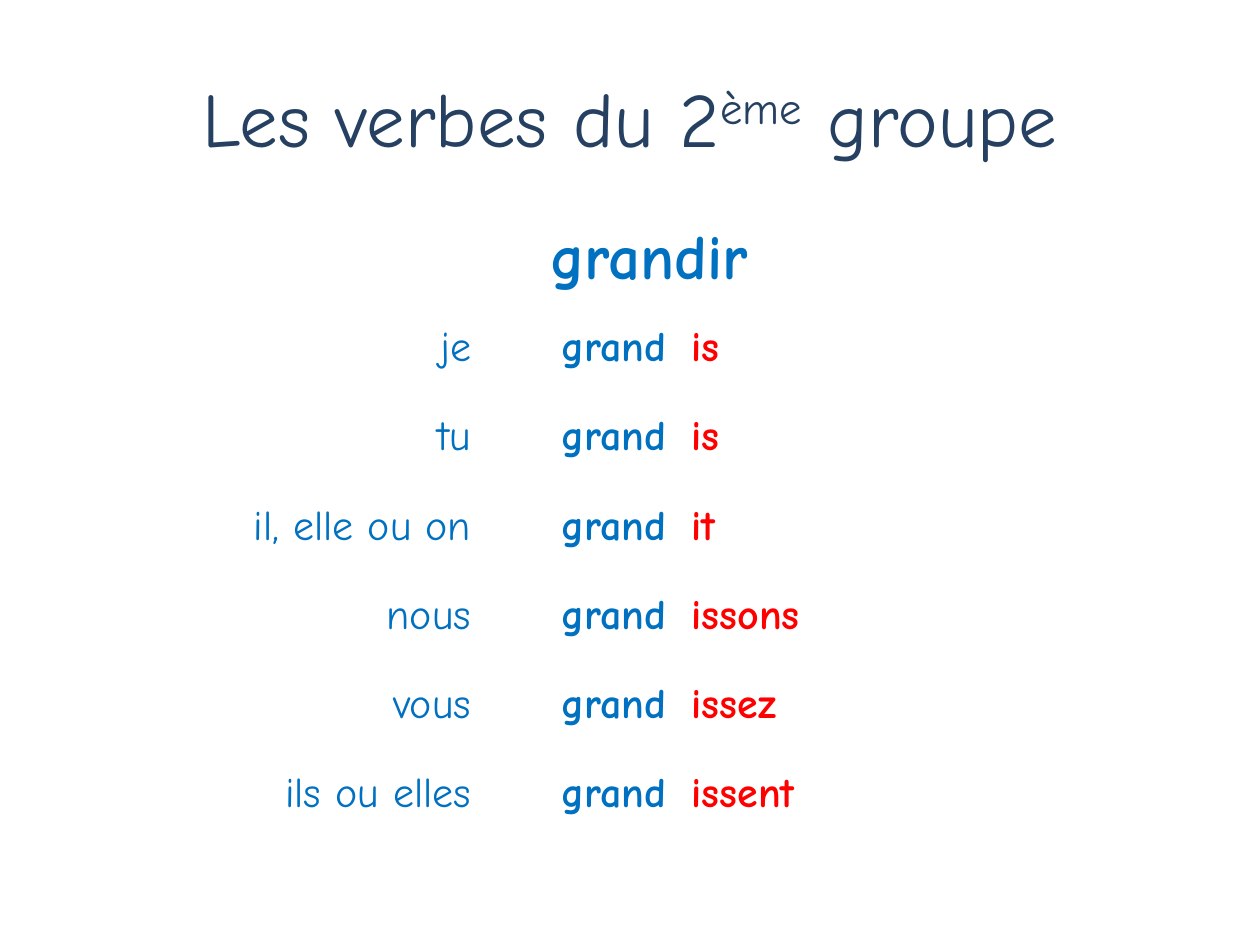
from pptx import Presentation
from pptx.dml.color import RGBColor
from pptx.enum.text import MSO_ANCHOR, PP_ALIGN
from pptx.util import Pt

CENTER, LEFT, RIGHT = PP_ALIGN.CENTER, PP_ALIGN.LEFT, PP_ALIGN.RIGHT
MIDDLE = MSO_ANCHOR.MIDDLE

FONT = "Comic Neue"
NAVY, BLUE, RED, WHITE = "254061", "0070C0", "FF0000", "FFFFFF"

TITLE = [("Les verbes du 2", False), ("ème", True), (" groupe", False)]
VERB, STEM = "grandir", "grand"
ENDINGS = [
    ("je", "is"),
    ("tu", "is"),
    ("il, elle ou on", "it"),
    ("nous", "issons"),
    ("vous", "issez"),
    ("ils ou elles", "issent"),
]
COLUMN_WIDTHS = [188.6, 111.6, 266.4]


def color(hex_string):
    return RGBColor.from_string(hex_string)


def style(span, size, hex_string, bold=False):
    span.font.name = FONT
    span.font.size = Pt(size)
    span.font.bold = bold
    span.font.color.rgb = color(hex_string)


def add_title(page, left, top, width, height):
    box = page.shapes.add_textbox(Pt(left), Pt(top), Pt(width), Pt(height))
    frame = box.text_frame
    frame.word_wrap = True
    frame.vertical_anchor = MIDDLE
    para = frame.paragraphs[0]
    para.alignment = CENTER
    for text, raised in TITLE:
        span = para.add_run()
        span.text = text
        style(span, 44, NAVY)
        if raised:
            span.font._element.set("baseline", "30000")


def fill_cell(cell, text, size, hex_string, bold, alignment):
    cell.vertical_anchor = MIDDLE
    para = cell.text_frame.paragraphs[0]
    para.text = text
    para.alignment = alignment
    style(para.runs[0], size, hex_string, bold)


def add_conjugation(page, left, top, width, height):
    row_count = len(ENDINGS) + 1
    frame = page.shapes.add_table(row_count, len(COLUMN_WIDTHS),
                                  Pt(left), Pt(top), Pt(width), Pt(height))
    table = frame.table
    for column, column_width in zip(table.columns, COLUMN_WIDTHS):
        column.width = Pt(column_width)
    for row in table.rows:
        row.height = Pt(height / row_count)
    for cell in table.iter_cells():
        cell.fill.solid()
        cell.fill.fore_color.rgb = color(WHITE)

    # Infinitive across the full width
    heading = table.cell(0, 0)
    heading.merge(table.cell(0, len(COLUMN_WIDTHS) - 1))
    fill_cell(heading, VERB, 36, BLUE, True, CENTER)

    # One row per person: pronoun, stem, ending
    for row, (pronoun, ending) in enumerate(ENDINGS, start=1):
        fill_cell(table.cell(row, 0), pronoun, 24, BLUE, False, RIGHT)
        fill_cell(table.cell(row, 1), STEM, 24, BLUE, True, RIGHT)
        fill_cell(table.cell(row, 2), ending, 24, RED, True, LEFT)


def main():
    deck = Presentation()
    deck.slide_width, deck.slide_height = Pt(720), Pt(540)
    page = deck.slides.add_slide(deck.slide_layouts[6])
    add_title(page, 36, 21.6, 648, 90)
    add_conjugation(page, 87.8, 122.4, sum(COLUMN_WIDTHS), 357.1)
    deck.save("out.pptx")


if __name__ == "__main__":
    main()
